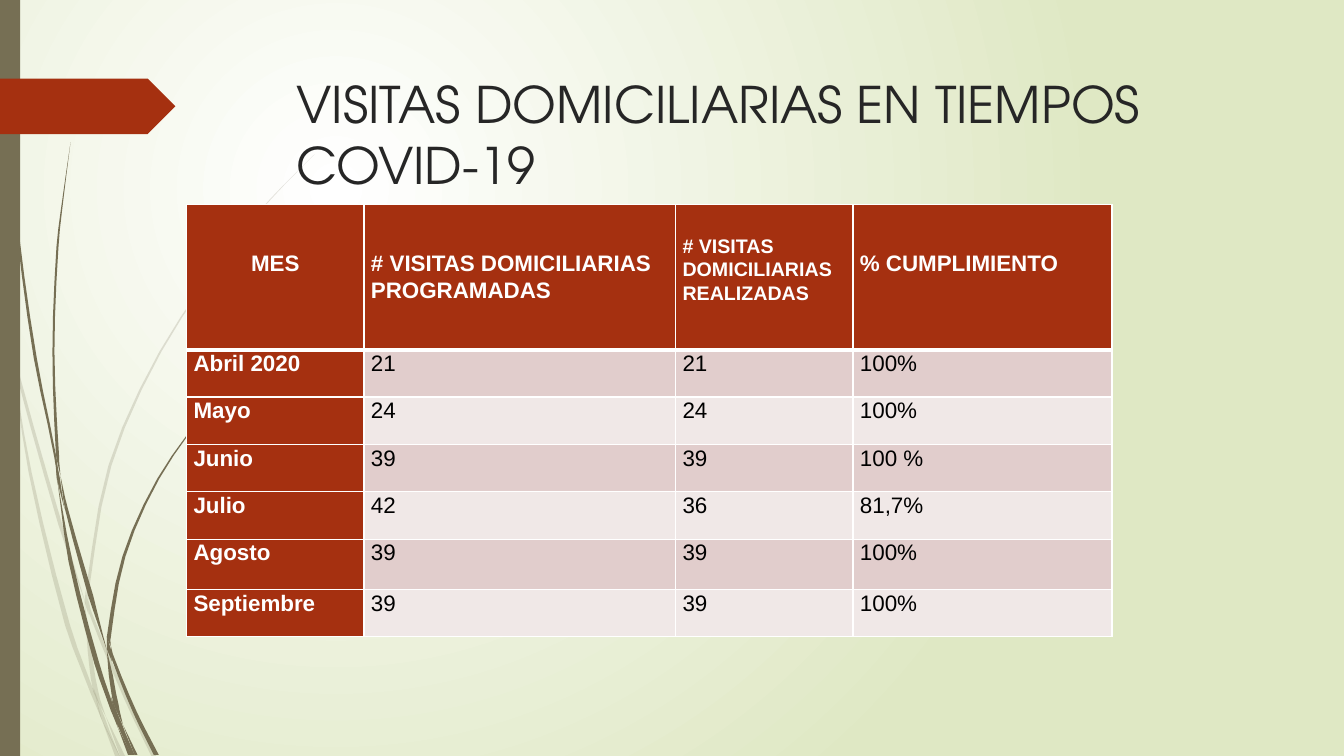
from dataclasses import dataclass

from lxml import etree
from pptx import Presentation
from pptx.dml.color import RGBColor
from pptx.enum.shapes import MSO_SHAPE
from pptx.enum.text import MSO_ANCHOR, PP_ALIGN
from pptx.oxml.ns import qn
from pptx.util import Inches, Pt

RECT, PENTAGON = MSO_SHAPE.RECTANGLE, MSO_SHAPE.PENTAGON
TOP, CENTER, LEFT = MSO_ANCHOR.TOP, PP_ALIGN.CENTER, PP_ALIGN.LEFT

# Content
TITLE = "VISITAS DOMICILIARIAS EN TIEMPOS COVID-19"
HEADER = ["MES", "# VISITAS DOMICILIARIAS PROGRAMADAS",
          "# VISITAS DOMICILIARIAS\nREALIZADAS", "% CUMPLIMIENTO"]
ROWS = [
    ("Abril 2020", "21", "21", "100%"),
    ("Mayo", "24", "24", "100%"),
    ("Junio", "39", "39", "100 %"),
    ("Julio", "42", "36", "81,7%"),
    ("Agosto", "39", "39", "100%"),
    ("Septiembre", "39", "39", "100%"),
]
COL_WIDTHS = [1.76, 3.09, 1.76, 2.57]
ROW_HEIGHTS = [1.44, 0.47, 0.47, 0.47, 0.47, 0.5, 0.47]
HEADER_TOP = [0.45, 0.45, 0.29, 0.45]

# Grass leaves, top to bottom: (x, y, width across) in inches
PALE_LEAVES = [
    [(0, 2.82, 0), (0.07, 3.22, 0.04), (0.11, 3.5, 0)],
    [(0.14, 3.45, 0), (0.19, 3.76, 0.03), (0.6, 5.21, 0.04), (0.85, 5.99, 0)],
    [(0.88, 5.96, 0), (0.9, 6.09, 0.03), (1.25, 6.93, 0.04), (1.53, 7.51, 0.05)],
    [(1.05, 7.11, 0), (1.22, 7.51, 0.05)],
    [(0.11, 3.5, 0), (0.3, 4.69, 0.03), (0.67, 6.2, 0.05), (0.92, 6.88, 0.04),
     (1.01, 7.14, 0)],
    [(0.84, 5.99, 0), (0.89, 6.46, 0.04), (0.95, 6.86, 0.05), (1.05, 7.11, 0)],
    [(3.12, 1.53, 0), (2.68, 1.98, 0.01), (2.29, 2.45, 0.01), (1.59, 3.49, 0.02),
     (1.09, 4.62, 0.03), (0.87, 5.84, 0.03), (0.88, 5.96, 0)],
    [(1.01, 7.14, 0), (1.17, 7.51, 0.05)],
    [(0.85, 5.86, 0), (0.86, 5.98, 0.04), (0.88, 6.1, 0)],
    [(0.93, 6.83, 0), (1.02, 7.12, 0.04), (1.19, 7.51, 0)],
]
DARK_LEAVES = [
    [(0.03, 0, 0.01), (0.07, 1.1, 0.01), (0.18, 2.33, 0.02), (0.35, 3.55, 0.03),
     (0.55, 4.54, 0.02), (0.57, 4.81, 0)],
    [(0.6, 4.72, 0), (0.66, 5.05, 0.03), (0.9, 5.91, 0.05), (1.06, 6.45, 0)],
    [(1.1, 6.41, 0), (1.12, 6.53, 0.03), (1.34, 7.07, 0.04), (1.55, 7.49, 0.05)],
    [(0.57, 4.77, 0), (0.7, 5.57, 0.04), (0.96, 6.58, 0.05), (1.12, 7.05, 0.04),
     (1.17, 7.22, 0)],
    [(0.7, 1.41, 0), (0.63, 1.93, 0.01), (0.57, 2.45, 0.02), (0.53, 3.49, 0.02),
     (0.57, 4.51, 0.03), (0.6, 4.72, 0)],
    [(1.22, 7.19, 0), (1.35, 7.49, 0.03)],
    [(0.55, 4.49, 0), (0.58, 4.75, 0.03), (0.64, 5.05, 0)],
    [(2.6, 3.44, 0.01), (2.31, 3.74, 0.01), (2.05, 4.06, 0.01), (1.57, 4.75, 0.02),
     (1.23, 5.52, 0.03), (1.08, 6.32, 0.04), (1.1, 6.41, 0)],
    [(1.17, 7.22, 0), (1.29, 7.49, 0.04)],
    [(1.06, 6.45, 0), (1.1, 6.7, 0.04), (1.15, 6.98, 0.05), (1.22, 7.19, 0)],
    [(1.06, 6.31, 0), (1.08, 6.44, 0.04), (1.11, 6.56, 0)],
    [(1.1, 6.91, 0), (1.18, 7.17, 0.05), (1.32, 7.49, 0.03)],
]


@dataclass(frozen=True)
class Theme:
    stem: str = "766F54"
    accent: str = "A53010"
    title: str = "262626"
    white: str = "FFFFFF"
    black: str = "000000"
    glow: str = "DFE8C4"
    bands: tuple = ("E1CDCC", "F0E8E7")
    title_font: str = "TeX Gyre Adventor"
    body_font: str = "Arial"
    title_size: int = 36
    body_size: int = 16
    small_size: int = 14


T = Theme()


def rgb(value):
    return RGBColor.from_string(value)


def paint(shape, color, opacity=100):
    shape.shadow.inherit = False
    shape.line.fill.background()
    shape.fill.solid()
    shape.fill.fore_color.rgb = rgb(color)
    if opacity < 100:
        clr = shape._element.spPr.find(".//" + qn("a:srgbClr"))
        etree.SubElement(clr, qn("a:alpha"), val=str(opacity * 1000))


def smooth(knots, steps=3):
    """Points on a cubic curve x(y) through the knots, with width."""
    last = len(knots) - 1
    slopes = []
    for i in range(len(knots)):
        a, b = knots[max(i - 1, 0)], knots[min(i + 1, last)]
        slopes.append((b[0] - a[0]) / (b[1] - a[1]))
    points = []
    for i in range(last):
        (x0, y0, w0), (x1, y1, w1) = knots[i:i + 2]
        dy = y1 - y0
        for k in range(steps):
            t = k / steps
            x = ((1 + 2 * t) * (1 - t) ** 2 * x0 + t * t * (3 - 2 * t) * x1
                 + t * (1 - t) ** 2 * dy * slopes[i]
                 - t * t * (1 - t) * dy * slopes[i + 1])
            points.append((x, y0 + t * dy, w0 + t * (w1 - w0)))
    return points + [knots[-1]]


def add_leaf(s, knots, opacity):
    points = smooth(knots) if len(knots) > 2 else knots
    outline = [(Inches(x - w / 2), Inches(y)) for x, y, w in points]
    outline += [(Inches(x + w / 2), Inches(y)) for x, y, w in reversed(points)]
    builder = s.shapes.build_freeform(*outline[0])
    builder.add_line_segments(outline[1:], close=True)
    paint(builder.convert_to_shape(), T.stem, opacity)


def set_background(s):
    fill = s.background.fill
    fill.gradient()
    for stop, color in zip(fill.gradient_stops, (T.white, T.glow)):
        stop.color.rgb = rgb(color)
    grad = s.background._cSld.find(".//" + qn("a:gradFill"))
    grad.remove(grad.find(qn("a:lin")))
    circle = etree.SubElement(grad, qn("a:path"), {"path": "circle"})
    etree.SubElement(circle, qn("a:fillToRect"), l="50000", t="50000",
                     r="100000", b="100000")


def set_borders(cell, top, bottom):
    tcPr = cell._tc.get_or_add_tcPr()
    sides = (("L", 1), ("R", 1), ("T", top), ("B", bottom))
    for i, (side, width) in enumerate(sides):
        ln = etree.Element(qn("a:ln" + side), w=str(Pt(width)))
        fill = etree.SubElement(ln, qn("a:solidFill"))
        etree.SubElement(fill, qn("a:srgbClr"), val=T.white)
        tcPr.insert(i, ln)


def fill_cell(cell, text, row, col):
    strong = row == 0 or col == 0
    cell.fill.solid()
    cell.fill.fore_color.rgb = rgb(T.accent if strong else T.bands[(row - 1) % 2])
    cell.margin_left = cell.margin_right = Inches(0.07)
    cell.margin_top = Inches(HEADER_TOP[col] if row == 0 else 0)
    cell.margin_bottom = 0
    cell.vertical_anchor = TOP
    cell.text_frame.text = text
    for p in cell.text_frame.paragraphs:
        p.alignment = CENTER if row == col == 0 else LEFT
        p.line_spacing = 1.07
        p.font.name = T.body_font
        p.font.size = Pt(T.small_size if (row, col) == (0, 2) else T.body_size)
        p.font.bold = strong
        p.font.color.rgb = rgb(T.white if strong else T.black)
    set_borders(cell, 3 if row == 1 else 1, 3 if row == 0 else 1)


def add_visits_table(s):
    grid = [HEADER, *ROWS]
    table = s.shapes.add_table(
        len(grid), len(HEADER), Inches(1.85), Inches(2.03),
        Inches(sum(COL_WIDTHS)), Inches(sum(ROW_HEIGHTS))).table
    for column, width in zip(table.columns, COL_WIDTHS):
        column.width = Inches(width)
    for r, (values, height) in enumerate(zip(grid, ROW_HEIGHTS)):
        table.rows[r].height = Inches(height)
        for c, text in enumerate(values):
            fill_cell(table.cell(r, c), text, r, c)


def set_title(s):
    title = s.shapes.title
    title.left, title.top = Inches(2.84), Inches(0.68)
    title.width, title.height = Inches(9.75), Inches(1.4)
    tf = title.text_frame
    tf.text = TITLE
    tf.word_wrap = True
    tf.vertical_anchor = TOP
    p = tf.paragraphs[0]
    p.alignment = LEFT
    p.line_spacing = 1
    p.font.name, p.font.size = T.title_font, Pt(T.title_size)
    p.font.color.rgb = rgb(T.title)


def main():
    prs = Presentation()
    prs.slide_width, prs.slide_height = Inches(13.33), Inches(7.5)
    s = prs.slides.add_slide(prs.slide_layouts[5])
    set_background(s)
    set_title(s)
    # Decoration on the left
    for leaves, opacity in ((PALE_LEAVES, 20), (DARK_LEAVES, 100)):
        for knots in leaves:
            add_leaf(s, knots, opacity)
    paint(s.shapes.add_shape(RECT, 0, 0, Inches(0.2), prs.slide_height), T.stem)
    paint(s.shapes.add_shape(PENTAGON, 0, Inches(0.78), Inches(1.74), Inches(0.55)),
          T.accent)
    add_visits_table(s)
    prs.save("out.pptx")


if __name__ == "__main__":
    main()
